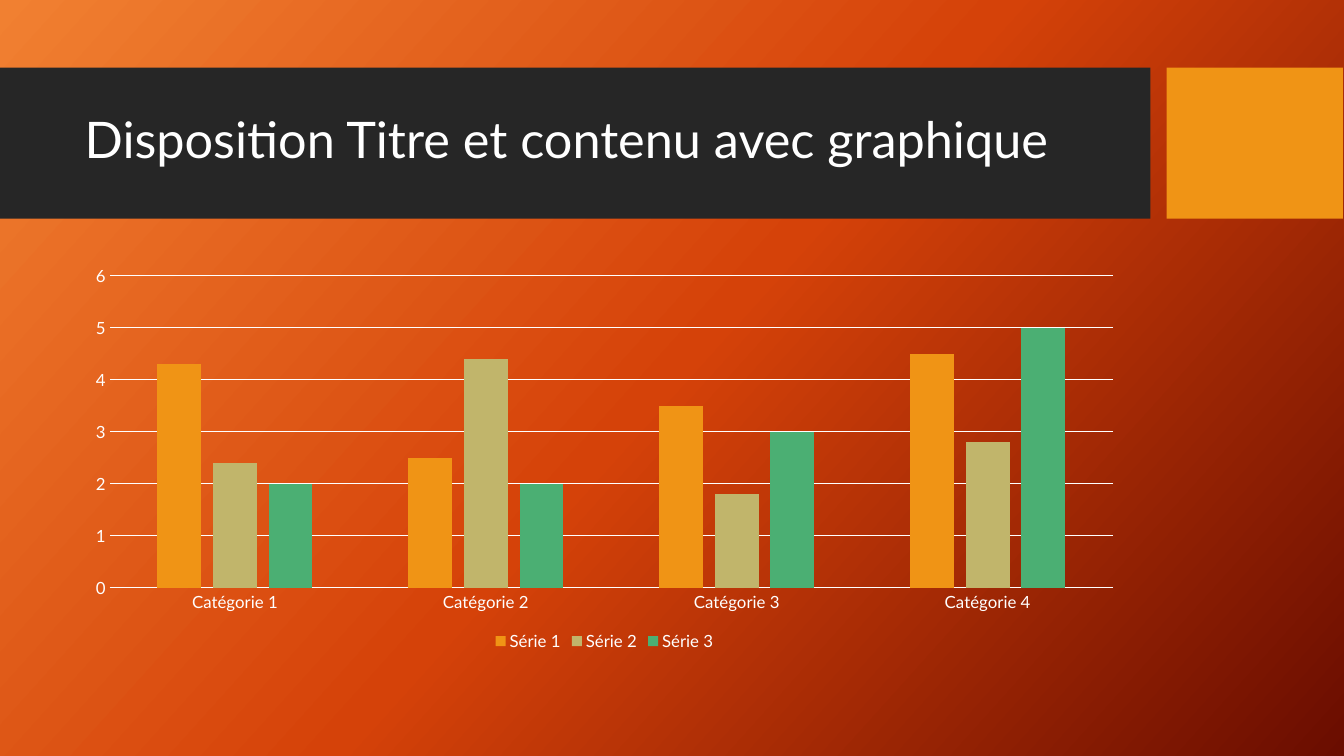
from copy import deepcopy
from dataclasses import dataclass

from pptx import Presentation
from pptx import util as u
from pptx.chart.data import CategoryChartData
from pptx.dml.color import RGBColor
from pptx.enum import chart as ch
from pptx.enum import shapes, text


@dataclass(frozen=True)
class Theme:
    font: str = "Lato"
    title_size: int = 36
    label_size: int = 12
    light: str = "FFFFFF"
    dark: str = "262626"
    accent: str = "F09415"
    sand: str = "C1B56B"
    green: str = "4BAF73"
    backdrop: tuple = ((0, "F18031"), (0.5, "D54209"), (1, "6A0D00"))
    backdrop_angle: int = 42
    line_width: float = 0.75


@dataclass(frozen=True)
class Band:
    left: float
    width: float
    color: str


@dataclass(frozen=True)
class Series:
    name: str
    values: tuple
    color: str


THEME = Theme()
BAND_TOP, BAND_HEIGHT = 0.67, 1.5
CONTENT_LEFT, CONTENT_WIDTH = 0.74, 10.51

BANDS = (Band(0, 11.41, THEME.dark), Band(11.57, 1.75, THEME.accent))
CATEGORIES = [f"Catégorie {n}" for n in range(1, 5)]
SERIES = (
    Series("Série 1", (4.3, 2.5, 3.5, 4.5), THEME.accent),
    Series("Série 2", (2.4, 4.4, 1.8, 2.8), THEME.sand),
    Series("Série 3", (2, 2, 3, 5), THEME.green),
)


def rgb(color: str) -> RGBColor:
    return RGBColor.from_string(color)


def style_font(font, size: int) -> None:
    font.name = THEME.font
    font.size = u.Pt(size)
    font.color.rgb = rgb(THEME.light)


def style_line(line) -> None:
    line.color.rgb = rgb(THEME.light)
    line.width = u.Pt(THEME.line_width)


def paint_backdrop(slide) -> None:
    fill = slide.background.fill
    fill.gradient()
    fill.gradient_angle = 360 - THEME.backdrop_angle
    # The default gradient has two stops; add the third
    stop_list = slide.element.xpath(".//a:gsLst")[0]
    stop_list.append(deepcopy(stop_list[-1]))
    for stop, (position, color) in zip(fill.gradient_stops, THEME.backdrop):
        stop.position = position
        stop.color.rgb = rgb(color)


def add_band(slide, band: Band) -> None:
    block = slide.shapes.add_shape(
        shapes.MSO_SHAPE.RECTANGLE, u.Inches(band.left), u.Inches(BAND_TOP),
        u.Inches(band.width), u.Inches(BAND_HEIGHT))
    block.shadow.inherit = False
    block.fill.solid()
    block.fill.fore_color.rgb = rgb(band.color)
    block.line.fill.background()


def set_title(slide, wording: str) -> None:
    title = slide.shapes.title
    title.left, title.top = u.Inches(CONTENT_LEFT), u.Inches(0.82)
    title.width, title.height = u.Inches(CONTENT_WIDTH), u.Inches(1.18)
    frame = title.text_frame
    frame.text = wording
    frame.word_wrap = True
    frame.auto_size = text.MSO_AUTO_SIZE.NONE
    frame.vertical_anchor = text.MSO_ANCHOR.MIDDLE
    heading = frame.paragraphs[0]
    heading.alignment = text.PP_ALIGN.LEFT
    heading.line_spacing = 0.9
    style_font(heading.font, THEME.title_size)
    # Bring the title in front of the bands
    slide.shapes.element.append(title.element)


def add_column_chart(slide) -> None:
    data = CategoryChartData()
    data.categories = CATEGORIES
    for series in SERIES:
        data.add_series(series.name, series.values)
    chart = slide.shapes.add_chart(
        ch.XL_CHART_TYPE.COLUMN_CLUSTERED, u.Inches(CONTENT_LEFT), u.Inches(2.56),
        u.Inches(CONTENT_WIDTH), u.Inches(3.94), data).chart
    chart.has_title = False
    style_font(chart.font, THEME.label_size)

    # Columns
    plot = chart.plots[0]
    plot.gap_width, plot.overlap = 219, -27
    plot.vary_by_categories = False
    for columns, series in zip(plot.series, SERIES):
        columns.format.fill.solid()
        columns.format.fill.fore_color.rgb = rgb(series.color)
        columns.invert_if_negative = False

    # Axes
    for axis in (chart.category_axis, chart.value_axis):
        axis.major_tick_mark = axis.minor_tick_mark = ch.XL_TICK_MARK.NONE
        style_font(axis.tick_labels.font, THEME.label_size)
    style_line(chart.category_axis.format.line)
    scale = chart.value_axis
    scale.minimum_scale, scale.maximum_scale, scale.major_unit = 0, 6, 1
    scale.format.line.fill.background()
    style_line(scale.major_gridlines.format.line)

    # Legend
    chart.has_legend = True
    chart.legend.position = ch.XL_LEGEND_POSITION.BOTTOM
    chart.legend.include_in_layout = False
    style_font(chart.legend.font, THEME.label_size)


def main() -> None:
    deck = Presentation()
    deck.slide_width, deck.slide_height = u.Inches(13.33), u.Inches(7.5)
    slide = deck.slides.add_slide(deck.slide_layouts.get_by_name("Title Only"))
    paint_backdrop(slide)
    for band in BANDS:
        add_band(slide, band)
    set_title(slide, "Disposition Titre et contenu avec graphique")
    add_column_chart(slide)
    deck.save("out.pptx")


if __name__ == "__main__":
    main()
